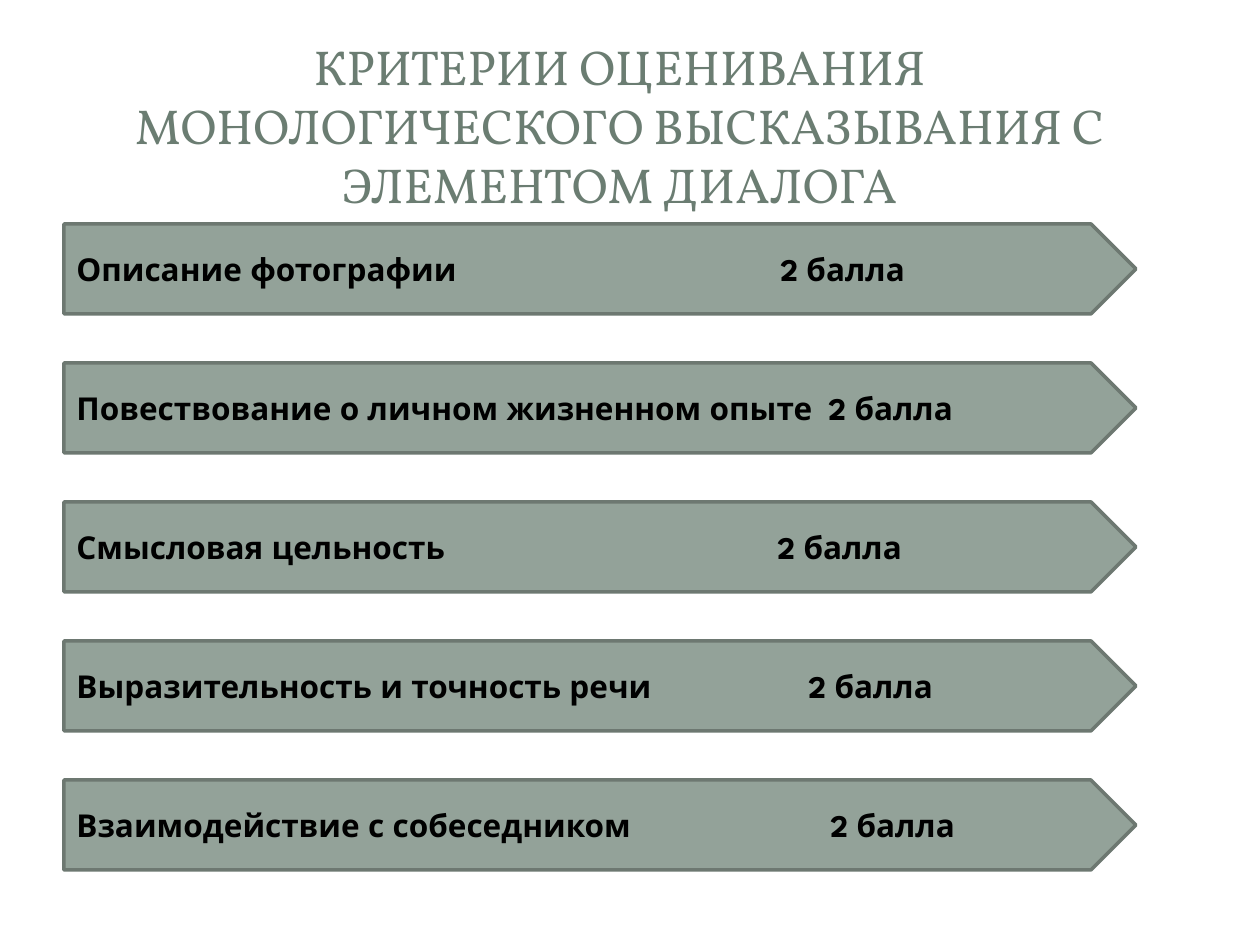
import pptx
import pptx.util
import pptx.dml.color
import pptx.enum.shapes
import pptx.enum.text
import lxml.etree

PX = 914400 // 126
COLORS = {"page": "FFFFFF", "title": "6B7D72", "bar": "93A299",
          "edge": "6D7871", "text": "000000"}
ALIGN = pptx.enum.text.PP_ALIGN


def rgb(name):
    return pptx.dml.color.RGBColor.from_string(COLORS[name])


def write(shape, text, font, size, color, bold=False, align=ALIGN.LEFT, tab=None):
    frame = shape.text_frame
    frame.word_wrap = True
    frame.vertical_anchor = pptx.enum.text.MSO_ANCHOR.MIDDLE
    para = frame.paragraphs[0]
    para.alignment = align
    if tab:
        props = para._p.get_or_add_pPr()
        ns = pptx.oxml.ns.qn
        stops = lxml.etree.SubElement(props, ns("a:tabLst"))
        lxml.etree.SubElement(stops, ns("a:tab"), pos=str(tab * PX), algn="l")
    run = para.add_run()
    run.text = text
    run.font.name = font
    run.font.size = pptx.util.Pt(size)
    run.font.bold = bold
    run.font.color.rgb = rgb(color)


deck = pptx.Presentation()
deck.slide_width = pptx.util.Inches(10)
deck.slide_height = pptx.util.Inches(7.5)
slide = deck.slides.add_slide(deck.slide_layouts[6])
slide.background.fill.solid()
slide.background.fill.fore_color.rgb = rgb("page")

# Title
box = slide.shapes.add_textbox(54 * PX, 26 * PX, 1131 * PX, 198 * PX)
write(box, "КРИТЕРИИ ОЦЕНИВАНИЯ МОНОЛОГИЧЕСКОГО ВЫСКАЗЫВАНИЯ С ЭЛЕМЕНТОМ ДИАЛОГА",
      font="Vollkorn", size=28, color="title", align=ALIGN.CENTER)

# Arrow bars: criterion and where its score starts
rows = [
    ("Описание фотографии", 704),
    ("Повествование о личном жизненном опыте", 752),
    ("Смысловая цельность", 701),
    ("Выразительность и точность речи", 732),
    ("Взаимодействие с собеседником", 754),
]
for i, (label, tab) in enumerate(rows):
    bar = slide.shapes.add_shape(pptx.enum.shapes.MSO_SHAPE.PENTAGON,
                                 64 * PX, (224 + 139 * i) * PX, 1072 * PX, 90 * PX)
    bar.shadow.inherit = False
    bar.fill.solid()
    bar.fill.fore_color.rgb = rgb("bar")
    bar.line.color.rgb = rgb("edge")
    bar.line.width = pptx.util.Pt(2)
    write(bar, label + "\t2 балла", font="League Spartan", size=18,
          color="text", bold=True, tab=tab)

deck.save("out.pptx")
